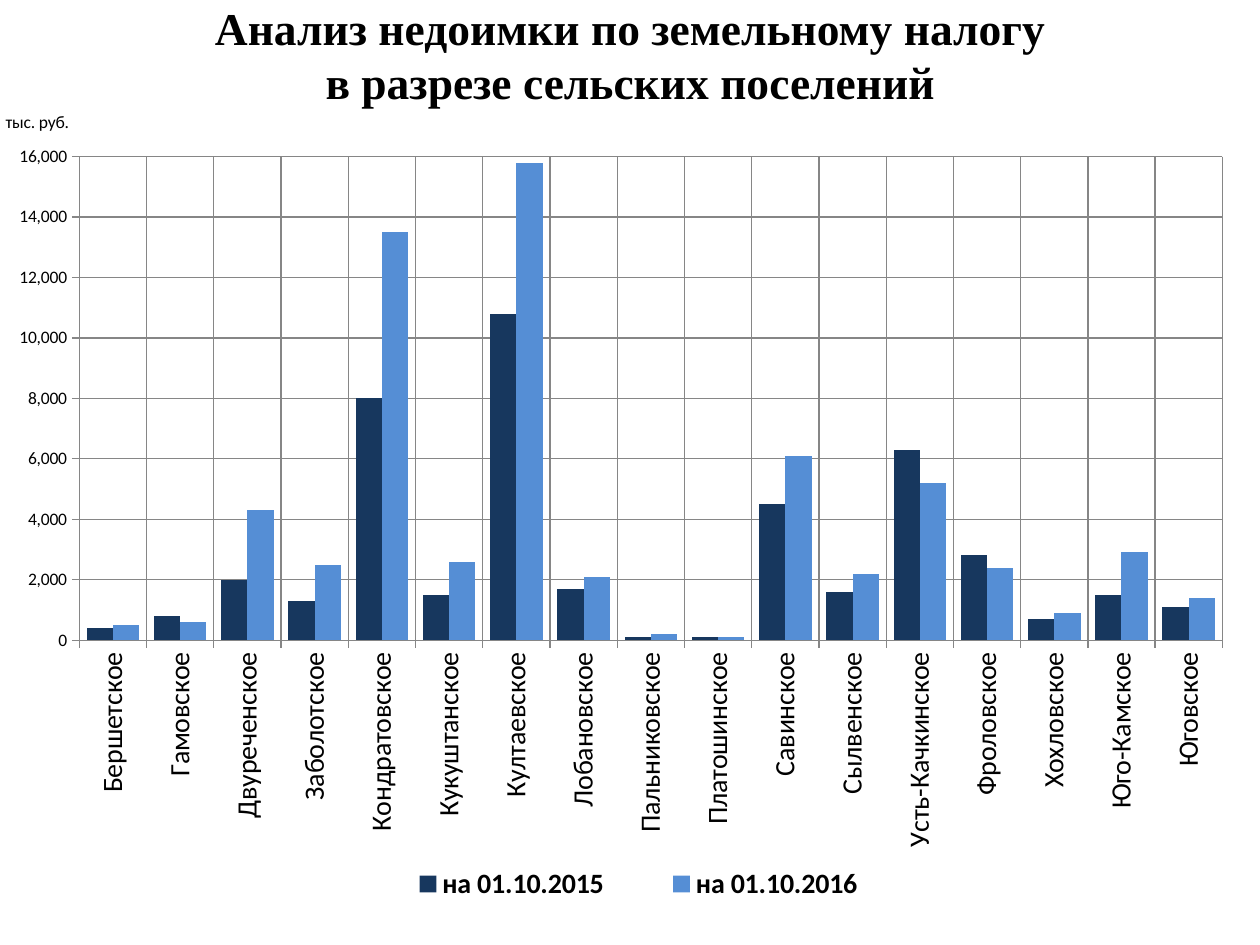
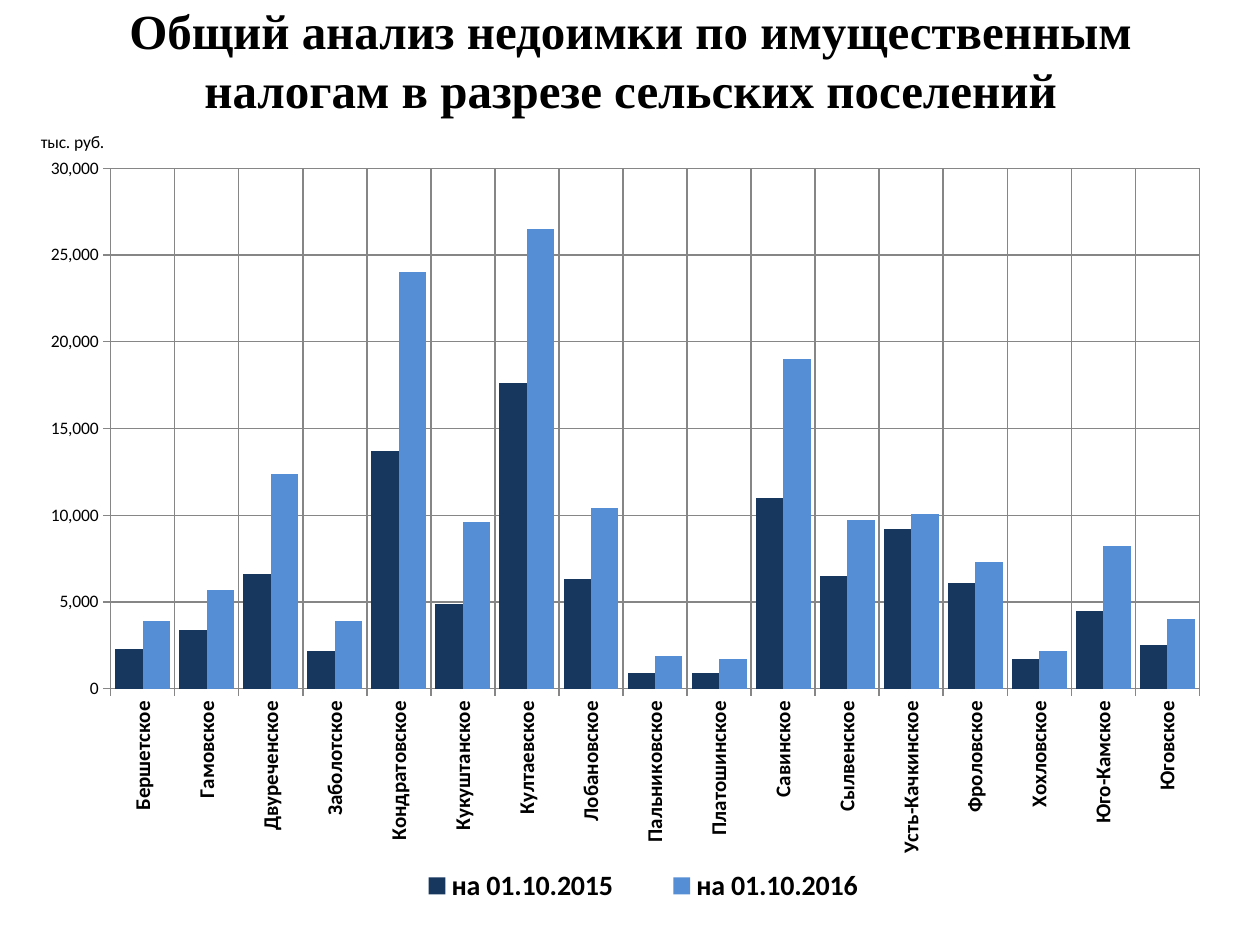
from dataclasses import dataclass

from lxml import etree
from pptx import Presentation
from pptx.chart.data import CategoryChartData
from pptx.dml.color import RGBColor
from pptx.enum.chart import XL_CHART_TYPE, XL_LEGEND_POSITION, XL_TICK_MARK
from pptx.enum.text import MSO_ANCHOR, MSO_AUTO_SIZE, PP_ALIGN
from pptx.oxml.ns import qn
from pptx.util import Inches, Pt

CLUSTERED = XL_CHART_TYPE.COLUMN_CLUSTERED
LEGEND_BOTTOM = XL_LEGEND_POSITION.BOTTOM
TICK_OUT = XL_TICK_MARK.OUTSIDE
MIDDLE = MSO_ANCHOR.MIDDLE
NO_FIT = MSO_AUTO_SIZE.NONE
CENTER = PP_ALIGN.CENTER


@dataclass(frozen=True)
class Theme:
    title_font: str = "Times New Roman"
    chart_font: str = "Calibri"
    ink: RGBColor = RGBColor(0, 0, 0)
    grid: RGBColor = RGBColor(0x86, 0x86, 0x86)
    series: tuple = (RGBColor(0x17, 0x37, 0x5E), RGBColor(0x55, 0x8E, 0xD5))
    chart_size: int = 18
    legend_size: int = 16
    value_size: int = 10


THEME = Theme()
UNIT = "тыс. руб."
DATES = ("на 01.10.2015", "на 01.10.2016")
SETTLEMENTS = (
    "Бершетское", "Гамовское", "Двуреченское", "Заболотское",
    "Кондратовское", "Кукуштанское", "Култаевское", "Лобановское",
    "Пальниковское", "Платошинское", "Савинское", "Сылвенское",
    "Усть-Качкинское", "Фроловское", "Хохловское", "Юго-Камское", "Юговское",
)

# Areas of the slide are inches; areas inside a chart are shares of the chart
UNIT_AREA = {"x": 0.002, "y": 0.011}
LEGEND_AREA = {"x": 0.29, "y": 0.94, "w": 0.45, "h": 0.06}

PAGES = (
    {
        "title": ("Анализ недоимки по земельному налогу",
                  "в разрезе сельских поселений"),
        "title_size": 26, "title_height": 0.86,
        "chart_area": (0, 0.78, 9.84, 6.43),
        "plot_area": {"x": 0.064, "y": 0.072, "w": 0.922, "h": 0.597},
        "label_size": 16, "label_bold": False,
        "gap": 56, "top_value": 16000, "step": 2000,
        "arrears": (
            (400, 800, 2000, 1300, 8000, 1500, 10800, 1700, 100, 100,
             4500, 1600, 6300, 2800, 700, 1500, 1100),
            (500, 600, 4300, 2500, 13500, 2600, 15800, 2100, 200, 100,
             6100, 2200, 5200, 2400, 900, 2900, 1400),
        ),
    },
    {
        "title": ("Общий анализ недоимки по имущественным "
                  "налогам в разрезе сельских поселений",),
        "title_size": 28, "title_height": 0.94,
        "chart_area": (0.28, 0.94, 9.37, 6.28),
        "plot_area": {"x": 0.064, "y": 0.063, "w": 0.922, "h": 0.658},
        "label_size": 12, "label_bold": True,
        "gap": 33, "top_value": 30000, "step": 5000,
        "arrears": (
            (2300, 3400, 6600, 2200, 13700, 4900, 17600, 6300, 900, 900,
             11000, 6500, 9200, 6100, 1700, 4500, 2500),
            (3900, 5700, 12400, 3900, 24000, 9600, 26500, 10400, 1900, 1700,
             19000, 9700, 10100, 7300, 2200, 8200, 4000),
        ),
    },
)


def set_font(font, name, size, bold):
    font.name = name
    font.size = Pt(size)
    font.bold = bold
    font.color.rgb = THEME.ink


def place_part(part, index, area, inner=False):
    """Give a chart part a fixed place, in shares of the chart."""
    for old_layout in part.findall(qn("c:layout")):
        part.remove(old_layout)
    layout = etree.Element(qn("c:layout"))
    manual = etree.SubElement(layout, qn("c:manualLayout"))
    if inner:
        etree.SubElement(manual, qn("c:layoutTarget")).set("val", "inner")
    for side in ("x", "y"):
        etree.SubElement(manual, qn(f"c:{side}Mode")).set("val", "edge")
    for side, share in area.items():
        etree.SubElement(manual, qn(f"c:{side}")).set("val", str(share))
    part.insert(index, layout)


deck = Presentation()
deck.slide_width = Inches(10)
deck.slide_height = Inches(7.5)
title_only = deck.slide_layouts[5]

for page_plan in PAGES:
    page = deck.slides.add_slide(title_only)

    # Title
    title = page.shapes.title
    title.left, title.top = Inches(0.2), 0
    title.width, title.height = Inches(9.61), Inches(page_plan["title_height"])
    frame = title.text_frame
    frame.word_wrap = True
    frame.auto_size = NO_FIT
    frame.vertical_anchor = MIDDLE
    para = frame.paragraphs[0]
    para.alignment = CENTER
    for number, line in enumerate(page_plan["title"]):
        if number:
            para.add_line_break()
        span = para.add_run()
        span.text = line
        set_font(span.font, THEME.title_font, page_plan["title_size"], True)

    # Chart and its data
    data = CategoryChartData(number_format="#,##0")
    data.categories = SETTLEMENTS
    for date, values in zip(DATES, page_plan["arrears"]):
        data.add_series(date, values)
    area = [Inches(length) for length in page_plan["chart_area"]]
    chart = page.shapes.add_chart(CLUSTERED, *area, data).chart
    chart.has_title = False
    set_font(chart.font, THEME.chart_font, THEME.chart_size, False)
    plot = chart.plots[0]
    plot.vary_by_categories = False
    plot.gap_width = page_plan["gap"]
    plot.overlap = 0
    for series, color in zip(plot.series, THEME.series):
        series.format.fill.solid()
        series.format.fill.fore_color.rgb = color
    plot_area = chart.value_axis._element.getparent()
    place_part(plot_area, 0, page_plan["plot_area"], inner=True)

    # Axes and grid
    names, amounts = chart.category_axis, chart.value_axis
    for axis in (names, amounts):
        axis.major_tick_mark = TICK_OUT
        axis.has_major_gridlines = True
        for line in (axis.format.line, axis.major_gridlines.format.line):
            line.color.rgb = THEME.grid
            line.width = Pt(0.75)
    set_font(names.tick_labels.font, THEME.chart_font,
             page_plan["label_size"], page_plan["label_bold"])
    label_body = names._element.find(qn("c:txPr")).find(qn("a:bodyPr"))
    label_body.set("rot", "-5400000")
    label_body.set("vert", "horz")
    set_font(amounts.tick_labels.font, THEME.chart_font, THEME.value_size, False)
    amounts.tick_labels.number_format = "#,##0"
    amounts.tick_labels.number_format_is_linked = False
    amounts.minimum_scale = 0
    amounts.maximum_scale = page_plan["top_value"]
    amounts.major_unit = page_plan["step"]

    # Unit above the value axis
    unit_frame = amounts.axis_title.text_frame
    span = unit_frame.paragraphs[0].add_run()
    span.text = UNIT
    set_font(span.font, THEME.chart_font, THEME.value_size, False)
    unit_body = unit_frame._txBody.find(qn("a:bodyPr"))
    unit_body.set("rot", "0")
    unit_body.set("vert", "horz")
    place_part(amounts.axis_title._element, 1, UNIT_AREA)

    # Legend
    chart.has_legend = True
    legend = chart.legend
    legend.position = LEGEND_BOTTOM
    legend.include_in_layout = False
    set_font(legend.font, THEME.chart_font, THEME.legend_size, True)
    place_part(legend._element, 1, LEGEND_AREA)

deck.save("out.pptx")
